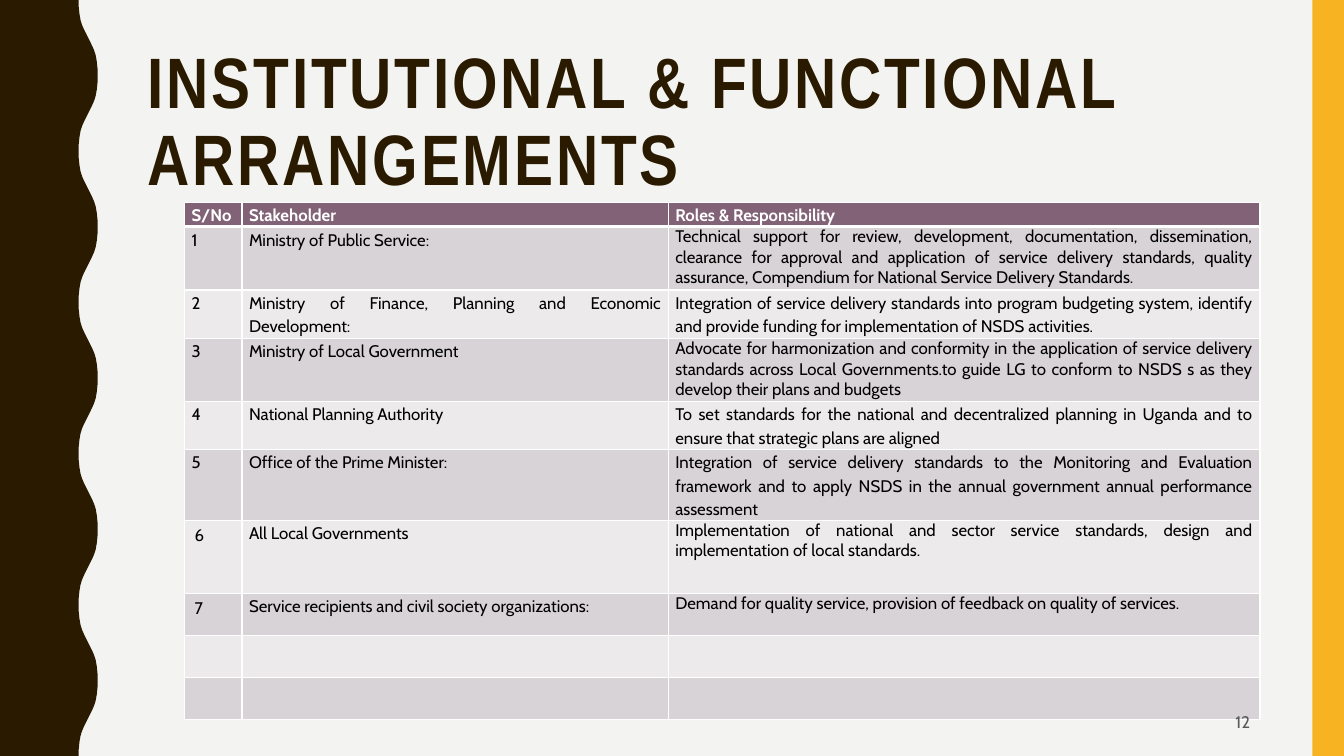
from pptx import Presentation
from pptx.dml.color import RGBColor
from pptx.enum.shapes import MSO_SHAPE
from pptx.enum.text import MSO_ANCHOR, PP_ALIGN
from pptx.oxml.ns import qn
from pptx.util import Pt
from lxml.etree import SubElement

RECTANGLE = MSO_SHAPE.RECTANGLE
TOP, MIDDLE = MSO_ANCHOR.TOP, MSO_ANCHOR.MIDDLE
LEFT, RIGHT, JUSTIFY = PP_ALIGN.LEFT, PP_ALIGN.RIGHT, PP_ALIGN.JUSTIFY

WIDTH, HEIGHT = 960, 540
BROWN, AMBER, PAPER = "2A1A00", "F8B323", "F3F3F2"
PLUM, DARK_BAND, LIGHT_BAND = "826276", "D8D3D6", "EDEAEC"
WHITE, BLACK, GREY = "FFFFFF", "000000", "595959"
HEADING_FONT, BODY_FONT = "Arial Narrow", "Cabin"

# One falling half of a wave: (x, y) from trough to crest
HALF_WAVE = [(56.2, 0), (56.3, 5), (56.8, 10), (57.6, 14.5), (58.7, 18),
             (60, 21), (61.5, 24), (63, 27), (64.5, 30), (66, 33),
             (67.3, 36), (68.4, 39.5), (69.2, 44), (69.7, 49), (69.8, 54)]
WAVE_COUNT = 5
WAVE_LENGTH = HEIGHT / WAVE_COUNT

COLUMN_WIDTHS = [41.1, 304.5, 422.6]
ROW_HEIGHTS = [17.2, 45.3, 34.4, 45, 34.4, 50.6, 52.2, 30, 30, 30]
HEADINGS = ["S/No", "Stakeholder", "Roles & Responsibility"]
# Stakeholder, role, line spacing of the role
STAKEHOLDERS = [
    ("Ministry of Public Service:",
     "Technical support for review, development, documentation, dissemination, "
     "clearance for approval and application of service delivery standards, quality "
     "assurance, Compendium for National Service Delivery Standards.", 1),
    ("Ministry of Finance, Planning and Economic Development:",
     "Integration of service delivery standards into program budgeting system, identify "
     "and provide funding for implementation of NSDS activities.", 1.15),
    ("Ministry of Local Government",
     "Advocate for harmonization and conformity in the application of service delivery "
     "standards across Local Governments.to guide LG to conform to NSDS s as they "
     "develop their plans and budgets", 1),
    ("National Planning Authority",
     "To set standards for the national and decentralized planning in Uganda and to "
     "ensure that strategic plans are aligned", 1.15),
    ("Office of the Prime Minister:",
     "Integration of service delivery standards to the Monitoring and Evaluation "
     "framework and to apply NSDS in the annual government annual performance "
     "assessment", 1.15),
    ("All Local Governments",
     "Implementation of national and sector service standards, design and "
     "implementation of local standards.", 1),
    ("Service recipients and civil society organizations:",
     "Demand for quality service, provision of feedback on quality of services.", 1),
]
INDENTED_NUMBERS = ("6", "7")


def color(value):
    return RGBColor.from_string(value)


def paint(target, value):
    target.fill.solid()
    target.fill.fore_color.rgb = color(value)


def write(frame, text, size=12, font=BODY_FONT, ink=BLACK, bold=False,
          align=LEFT, line_spacing=1, tracking=0):
    para = frame.paragraphs[0]
    para.alignment = align
    para.line_spacing = line_spacing
    if not text:
        para.font.size = Pt(size)
        return
    span = para.add_run()
    span.text = text
    span.font.size = Pt(size)
    span.font.name = font
    span.font.bold = bold
    span.font.color.rgb = color(ink)
    if tracking:
        span.font._element.set("spc", str(tracking * 100))


def draw_border(cell, side, width):
    properties = cell._tc.get_or_add_tcPr()
    line = SubElement(properties, qn("a:" + side), w=str(Pt(width)))
    fill = SubElement(line, qn("a:solidFill"))
    SubElement(fill, qn("a:srgbClr"), val=WHITE)


class Slide:
    def __init__(self, deck, background):
        self.page = deck.slides.add_slide(deck.slide_layouts[6])
        paint(self.page.background, background)
        self.shapes = self.page.shapes

    def finish(self, shape, fill):
        paint(shape, fill)
        shape.line.fill.background()
        shape.shadow.inherit = False

    def rectangle(self, left, top, width, height, fill):
        box = self.shapes.add_shape(RECTANGLE, Pt(left), Pt(top), Pt(width), Pt(height))
        self.finish(box, fill)

    def outline(self, points, fill):
        corners = [(Pt(x), Pt(y)) for x, y in points]
        builder = self.shapes.build_freeform(*corners[0])
        builder.add_line_segments(corners[1:], close=True)
        self.finish(builder.convert_to_shape(), fill)

    def text(self, left, top, width, height, text, anchor=TOP, **style):
        box = self.shapes.add_textbox(Pt(left), Pt(top), Pt(width), Pt(height))
        box.text_frame.word_wrap = True
        box.text_frame.vertical_anchor = anchor
        write(box.text_frame, text, **style)

    def table(self, left, top, widths, heights):
        frame = self.shapes.add_table(len(heights), len(widths), Pt(left), Pt(top),
                                      Pt(sum(widths)), Pt(sum(heights)))
        table = frame.table
        for column, width in zip(table.columns, widths):
            column.width = Pt(width)
        for row, height in zip(table.rows, heights):
            row.height = Pt(height)
        return table

    def cell(self, cell, text, fill, top_line=1, bottom_line=1, tight=True, **style):
        if tight:
            cell.margin_left = cell.margin_right = Pt(5)
            cell.margin_top = cell.margin_bottom = 0
        for side, width in (("lnL", 1), ("lnR", 1), ("lnT", top_line), ("lnB", bottom_line)):
            draw_border(cell, side, width)
        paint(cell, fill)
        write(cell.text_frame, text, **style)


def main():
    deck = Presentation()
    deck.slide_width, deck.slide_height = Pt(WIDTH), Pt(HEIGHT)
    slide = Slide(deck, PAPER)

    # Wavy left edge and right stripe
    wave = HALF_WAVE + [(x, WAVE_LENGTH - y) for x, y in HALF_WAVE[-2::-1]]
    edge = [(x, y + WAVE_LENGTH * index) for index in range(WAVE_COUNT) for x, y in wave]
    slide.outline([(0, 0)] + edge + [(0, HEIGHT)], BROWN)
    slide.rectangle(937.5, 0, 22.5, HEIGHT, AMBER)

    # Title
    slide.text(98.6, 30.2, 801.4, 117.4, "INSTITUTIONAL & FUNCTIONAL ARRANGEMENTS",
               size=51, font=HEADING_FONT, ink=BROWN, bold=True,
               line_spacing=0.9, tracking=2)

    # Stakeholder table
    table = slide.table(131.8, 144.7, COLUMN_WIDTHS, ROW_HEIGHTS)
    for column, heading in enumerate(HEADINGS):
        slide.cell(table.cell(0, column), heading, PLUM, bottom_line=3, ink=WHITE,
                   bold=True, align=JUSTIFY, line_spacing=1.15)
    for row in range(1, len(ROW_HEIGHTS)):
        number, name, role, role_spacing = "", "", "", 1
        if row <= len(STAKEHOLDERS):
            number = str(row)
            name, role, role_spacing = STAKEHOLDERS[row - 1]
        indented = number in INDENTED_NUMBERS
        band = DARK_BAND if row % 2 else LIGHT_BAND
        top_line = 3 if row == 1 else 1
        slide.cell(table.cell(row, 0), number, band, top_line, tight=not indented,
                   line_spacing=1 if indented else 1.15)
        slide.cell(table.cell(row, 1), name, band, top_line,
                   align=JUSTIFY, line_spacing=1.15)
        slide.cell(table.cell(row, 2), role, band, top_line,
                   align=JUSTIFY, line_spacing=role_spacing)

    # Page number
    slide.text(678.2, 501.8, 221.8, 27.4, "12", anchor=MIDDLE, ink=GREY, align=RIGHT)

    deck.save("out.pptx")


if __name__ == "__main__":
    main()
